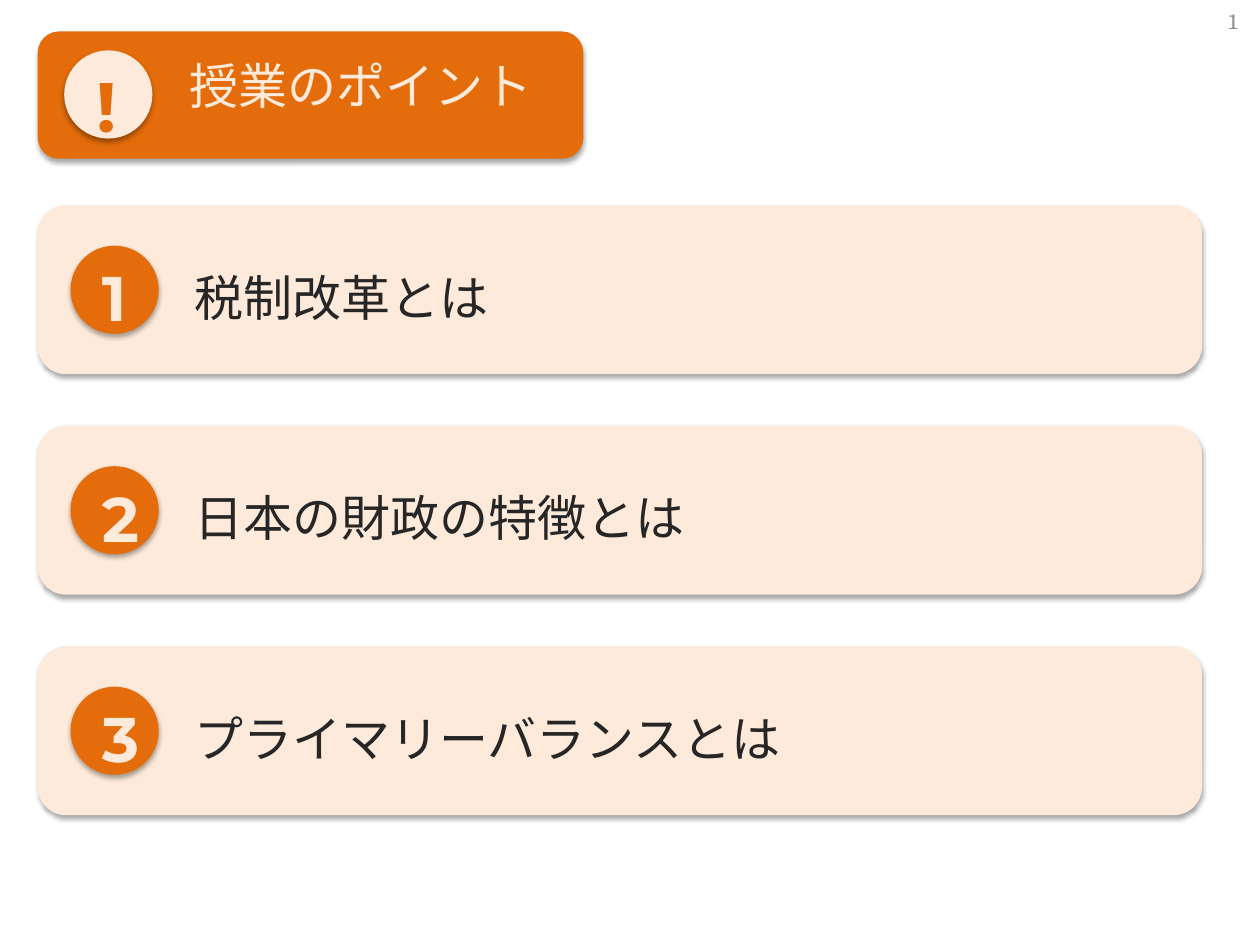
"""Build the lesson-points slide with a heading badge and three numbered rows."""
from lxml.etree import SubElement
from pptx import Presentation
from pptx.dml.color import RGBColor
from pptx.enum.shapes import MSO_SHAPE
from pptx.enum.text import MSO_ANCHOR, PP_ALIGN
from pptx.oxml.ns import qn
from pptx.util import Inches, Pt

ORANGE = RGBColor(0xE4, 0x6C, 0x0A)
CREAM = RGBColor(0xFD, 0xEA, 0xDA)
DARK = RGBColor(0x26, 0x26, 0x26)
GRAY = RGBColor(0x8C, 0x8C, 0x8C)

JAPANESE = "Noto Sans CJK JP"
NUMERAL = "Montserrat"
SERIF = "TeX Gyre Schola"

TOPICS = ["税制改革とは", "日本の財政の特徴とは", "プライマリーバランスとは"]
FIRST_ROW_TOP = 1.63
ROW_STEP = 1.75
CARD_LEFT = 0.3
BADGE_SIZE = 0.7


def add_shadow(shape):
    shape.shadow.inherit = False
    effects = shape._element.spPr.find(qn("a:effectLst"))
    shadow = SubElement(effects, qn("a:outerShdw"), blurRad=str(Pt(3.1)),
                        dist=str(Pt(1.8)), dir="5400000", rotWithShape="0")
    color = SubElement(shadow, qn("a:srgbClr"), val="000000")
    SubElement(color, qn("a:alpha"), val="35000")


def add_panel(shapes, kind, left, top, width, height, fill):
    panel = shapes.add_shape(kind, Inches(left), Inches(top), Inches(width), Inches(height))
    panel.fill.solid()
    panel.fill.fore_color.rgb = fill
    panel.line.fill.background()
    add_shadow(panel)
    return panel


def write(frame, text, size, face, color, bold=False, align=PP_ALIGN.LEFT):
    frame.word_wrap = True
    frame.text = text
    paragraph = frame.paragraphs[0]
    paragraph.alignment = align
    run = paragraph.runs[0]
    run.font.size = Pt(size)
    run.font.name = face
    run.font.bold = bold
    run.font.color.rgb = color
    SubElement(run.font._element, qn("a:ea"), typeface=face)


def add_label(shapes, left, top, width, height, text, size, face, color,
              anchor=MSO_ANCHOR.MIDDLE, **style):
    label = shapes.add_textbox(Inches(left), Inches(top), Inches(width), Inches(height))
    frame = label.text_frame
    frame.vertical_anchor = anchor
    write(frame, text, size, face, color, **style)
    return frame


def add_badge(shapes, left, top, symbol, symbol_left, symbol_top, size, fill, color):
    add_panel(shapes, MSO_SHAPE.OVAL, left, top, BADGE_SIZE, BADGE_SIZE, fill)
    frame = add_label(shapes, symbol_left, symbol_top, 0.37, 0.75, symbol, size,
                      NUMERAL, color, bold=True)
    frame.paragraphs[0].line_spacing = 1.2


def add_heading(shapes):
    add_panel(shapes, MSO_SHAPE.ROUNDED_RECTANGLE, CARD_LEFT, 0.25, 4.33, 1.01, ORANGE)
    add_badge(shapes, 0.51, 0.4, "!", 0.67, 0.39, 40, CREAM, ORANGE)
    title = add_label(shapes, 1.41, 0.44, 3, 0.63, "授業のポイント", 28, JAPANESE,
                      CREAM, anchor=MSO_ANCHOR.TOP)
    title.margin_top = 0


def add_topic(shapes, number, topic):
    top = FIRST_ROW_TOP + (number - 1) * ROW_STEP
    card = add_panel(shapes, MSO_SHAPE.ROUNDED_RECTANGLE, CARD_LEFT, top, 9.24, 1.34, CREAM)
    frame = card.text_frame
    frame.vertical_anchor = MSO_ANCHOR.MIDDLE
    frame.margin_left = Inches(1.18)
    frame.margin_top = Inches(0.31)
    frame.margin_right = frame.margin_bottom = Inches(0.2)
    write(frame, topic, 28, JAPANESE, DARK)
    badge = shapes.add_group_shape()
    add_badge(badge.shapes, 0.56, top + 0.32, str(number), 0.71, top + 0.29, 36,
              ORANGE, CREAM)


def main():
    presentation = Presentation()
    presentation.slide_width = Inches(10)
    presentation.slide_height = Inches(7.5)
    shapes = presentation.slides.add_slide(presentation.slide_layouts[6]).shapes
    add_label(shapes, 7.6, 0.04, 2.33, 0.26, "1", 12, SERIF, GRAY, align=PP_ALIGN.RIGHT)
    add_heading(shapes)
    for number, topic in enumerate(TOPICS, start=1):
        add_topic(shapes, number, topic)
    presentation.save("out.pptx")


if __name__ == "__main__":
    main()
